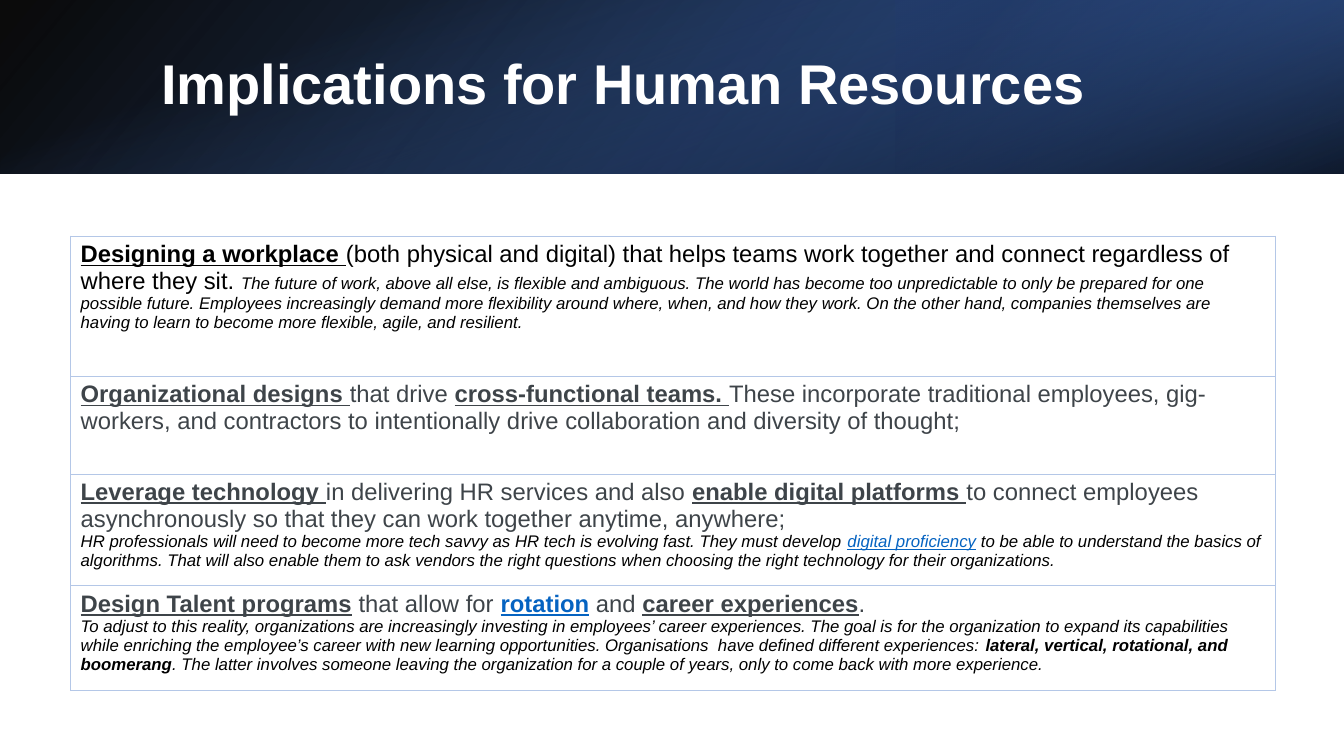
from lxml.etree import SubElement as Sub
from pptx import Presentation
from pptx.dml.color import RGBColor as RGB
from pptx.enum.shapes import MSO_SHAPE as Shape
from pptx.enum.text import MSO_ANCHOR as Anchor
from pptx.oxml.ns import qn
from pptx.util import Inches, Pt

W, H = 13.33, 7.5
BAND = 0.23 * H
C = {"white": "FFFFFF", "black": "000000", "grey": "3E4449", "link": "0563C1",
     "edge": "B4C7E7", "blue": "4472C4", "mid": "2F5597", "navy": "203864"}

deck = Presentation()
deck.slide_width, deck.slide_height = Inches(W), Inches(H)
slide = deck.slides.add_slide(deck.slide_layouts[6])


def solid(node, name):
    """Add a solid fill to an XML node."""
    Sub(Sub(node, qn("a:solidFill")), qn("a:srgbClr"), val=C[name])


def style(run, size, name, bold=False, italic=False, line=False):
    font = run.font
    font.name, font.size = "Arial", Pt(size)
    font.bold, font.italic, font.underline = bold, italic, line
    font.color.rgb = RGB.from_string(C[name])


# Header band: layered gradients (box, turn, flip, angle, stops with opacity)
layers = [
    ((0, 0, W, BAND), 0, True, 140, [(0, "black", 96), (100, "mid", 100)]),
    ((W * 2 / 3, 0, W / 3, BAND), 180, True, 320,
     [(19, "navy", 68), (100, "blue", 79)]),
    (((W - BAND) / 2, (BAND - W) / 2, BAND, W), 90, False, 340,
     [(23, "blue", 0), (99, "black", 74)]),
]
for box, turn, flip, angle, stops in layers:
    rect = slide.shapes.add_shape(Shape.RECTANGLE, *map(Inches, box))
    rect.shadow.inherit = False
    rect.line.fill.background()
    rect.rotation = turn
    props = rect._element.spPr
    if flip:
        props.find(qn("a:xfrm")).set("flipH", "1")
    grad = props.makeelement(qn("a:gradFill"), {"rotWithShape": "1"})
    props.find(qn("a:prstGeom")).addnext(grad)
    marks = Sub(grad, qn("a:gsLst"))
    for pos, name, alpha in stops:
        stop = Sub(marks, qn("a:gs"), pos=str(pos * 1000))
        tint = Sub(stop, qn("a:srgbClr"), val=C[name])
        Sub(tint, qn("a:alpha"), val=str(alpha * 1000))
    Sub(grad, qn("a:lin"), ang=str(angle * 60000), scaled="0")

# Title
title = slide.shapes.add_textbox(*map(Inches, (1.5, 0.38, 10.98, 0.96)))
frame = title.text_frame
frame.word_wrap = True
frame.vertical_anchor = Anchor.MIDDLE
frame.text = "Implications for Human Resources"
frame.paragraphs[0].line_spacing = 0.9
style(frame.paragraphs[0].runs[0], 40, "white", bold=True)

# Rows: height, lead colour, paragraphs of (text, marks)
# Marks: b bold, u underlined, n small italic note, l link colour
rows = [
    (1.39, "black", [[
        ("Designing a workplace ", "bu"),
        ("(both physical and digital) that helps teams work together and "
         "connect regardless of where they sit. ", ""),
        ("The future of work, above all else, is flexible and ambiguous. The "
         "world has become too unpredictable to only be prepared for one "
         "possible future. Employees increasingly demand more flexibility "
         "around where, when, and how they work. On the other hand, companies "
         "themselves are having to learn to become more flexible, agile, and "
         "resilient.", "n")]]),
    (0.97, "grey", [[
        ("Organizational designs ", "bu"),
        ("that drive ", ""),
        ("cross-functional teams. ", "bu"),
        ("These incorporate traditional employees, gig-workers, and "
         "contractors to intentionally drive collaboration and diversity of "
         "thought;", "")]]),
    (1.11, "grey", [[
        ("Leverage technology ", "bu"),
        ("in delivering HR services and also ", ""),
        ("enable digital platforms ", "bu"),
        ("to connect employees asynchronously so that they can work together "
         "anytime, anywhere;", "")], [
        ("HR professionals will need to become more tech savvy as HR tech is "
         "evolving fast. They must develop ", "n"),
        ("digital proficiency", "nul"),
        (" to be able to understand the basics of algorithms. That will also "
         "enable them to ask vendors the right questions when choosing the "
         "right technology for their organizations. ", "n")]]),
    (1.04, "grey", [[
        ("Design Talent programs", "bu"),
        (" that allow for ", ""),
        ("rotation", "bul"),
        (" and ", ""),
        ("career experiences", "bu"),
        (".", "")], [
        ("To adjust to this reality, organizations are increasingly investing "
         "in employees’ career experiences. The goal is for the organization "
         "to expand its capabilities while enriching the employee’s career "
         "with new learning opportunities. Organisations  have defined "
         "different experiences: ", "n"),
        ("lateral, vertical, rotational, and boomerang", "nb"),
        (". The latter involves someone leaving the organization for a couple "
         "of years, only to come back with more experience.", "n")]]),
]

# Table
tall = sum(row[0] for row in rows)
table = slide.shapes.add_table(
    len(rows), 1, *map(Inches, (0.7, 2.34, 11.95, tall))).table
table.first_row = table.horz_banding = False
for i, (high, lead, paras) in enumerate(rows):
    table.rows[i].height = Inches(high)
    cell = table.cell(i, 0)
    props = cell._tc.get_or_add_tcPr()
    for side in ("a:lnL", "a:lnR", "a:lnT", "a:lnB"):
        solid(Sub(props, qn(side), w=str(Pt(0.25))), "edge")
    cell.fill.background()
    frame = cell.text_frame
    for j, parts in enumerate(paras):
        para = frame.add_paragraph() if j else frame.paragraphs[0]
        for text, marks in parts:
            run = para.add_run()
            run.text = text
            note = "n" in marks
            name = "link" if "l" in marks else "black" if note else lead
            style(run, 12 if note else 17, name, "b" in marks, note,
                  "u" in marks)

deck.save("out.pptx")
